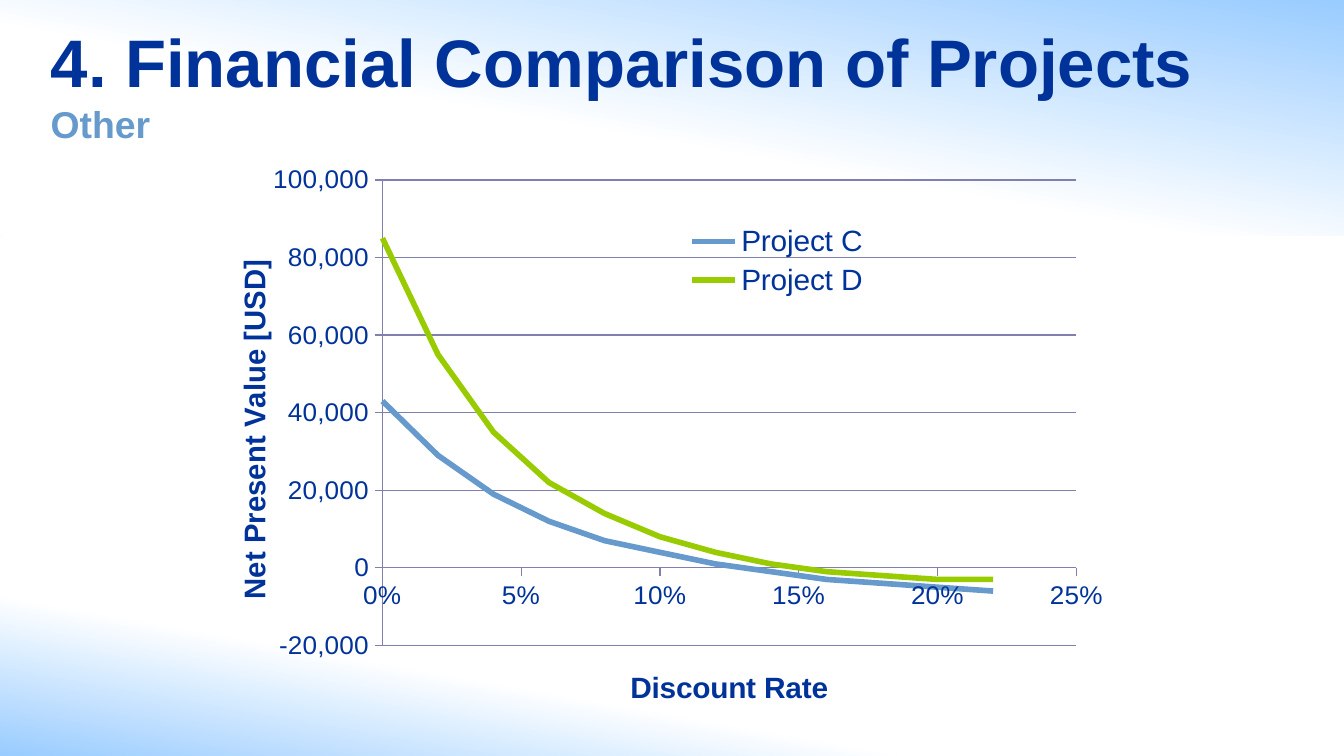
from dataclasses import dataclass

from lxml.etree import SubElement
from pptx import Presentation
from pptx.chart.data import XyChartData
from pptx.dml.color import RGBColor
from pptx.enum.chart import XL_CHART_TYPE, XL_LEGEND_POSITION, XL_TICK_MARK
from pptx.enum.shapes import MSO_SHAPE
from pptx.enum.text import MSO_ANCHOR, MSO_AUTO_SIZE, PP_ALIGN
from pptx.oxml.ns import qn
from pptx.util import Pt


@dataclass(frozen=True)
class Theme:
    font: str = "Arial"
    navy: RGBColor = RGBColor(0x00, 0x33, 0x99)
    steel: RGBColor = RGBColor(0x66, 0x99, 0xCC)
    green: RGBColor = RGBColor(0x99, 0xCC, 0x00)
    sky: RGBColor = RGBColor(0x99, 0xCC, 0xFF)
    white: RGBColor = RGBColor(0xFF, 0xFF, 0xFF)
    grid: RGBColor = RGBColor(0x80, 0x80, 0xB0)
    title: float = 36
    subtitle: float = 20
    label: float = 16
    tick: float = 14


THEME = Theme()
RATES = [step / 100 for step in range(0, 23, 2)]
PROJECTS = [
    ("Project C", THEME.steel, [43000, 29000, 19000, 12000, 7000, 4000,
                                1000, -1000, -3000, -4000, -5000, -6000]),
    ("Project D", THEME.green, [85000, 55000, 35000, 22000, 14000, 8000,
                                4000, 1000, -1000, -2000, -3000, -3000]),
]


def style_font(font, size, color=THEME.navy, bold=False):
    font.name = THEME.font
    font.size = Pt(size)
    font.bold = bold
    font.color.rgb = color


def place(shape, box):
    shape.left, shape.top, shape.width, shape.height = (Pt(value) for value in box)


def add_glow(page, box, angle, fade_end):
    """Sky-blue band that fades to white."""
    glow = page.shapes.add_shape(MSO_SHAPE.RECTANGLE, *(Pt(value) for value in box))
    glow.shadow.inherit = False
    glow.line.fill.background()
    glow.fill.gradient()
    glow.fill.gradient_angle = angle
    stops = glow.fill.gradient_stops
    for stop, color, position in zip(stops, (THEME.sky, THEME.white), (0, fade_end)):
        stop.color.rgb = color
        stop.position = position


def add_heading(page, title_box, subtitle_box):
    title = page.shapes.title
    place(title, title_box)
    page.shapes._spTree.append(title._element)  # bring in front of the bands
    subtitle = page.shapes.add_textbox(*(Pt(value) for value in subtitle_box))
    for shape, text, size, color in (
        (title, "4. Financial Comparison of Projects", THEME.title, THEME.navy),
        (subtitle, "Other", THEME.subtitle, THEME.steel),
    ):
        frame = shape.text_frame
        frame.word_wrap = True
        frame.text = text
        para = frame.paragraphs[0]
        para.alignment = PP_ALIGN.LEFT
        style_font(para.font, size, color, bold=True)
    title.text_frame.auto_size = MSO_AUTO_SIZE.NONE
    title.text_frame.vertical_anchor = MSO_ANCHOR.MIDDLE
    subtitle.text_frame.auto_size = MSO_AUTO_SIZE.SHAPE_TO_FIT_TEXT


def set_layout(element, index, inner=False, **fractions):
    """Fix a chart part at fractions of the chart area."""
    for old in element.findall(qn("c:layout")):
        element.remove(old)
    layout = SubElement(element, qn("c:layout"))
    element.insert(index, layout)
    manual = SubElement(layout, qn("c:manualLayout"))
    if inner:
        SubElement(manual, qn("c:layoutTarget")).set("val", "inner")
    for side in ("x", "y"):
        SubElement(manual, qn(f"c:{side}Mode")).set("val", "edge")
    for side, value in fractions.items():
        SubElement(manual, qn(f"c:{side}")).set("val", str(value))


def format_axis(axis, title, limits, number_format, title_spot):
    axis.minimum_scale, axis.maximum_scale, axis.major_unit = limits
    axis.major_tick_mark = XL_TICK_MARK.OUTSIDE
    axis.minor_tick_mark = XL_TICK_MARK.NONE
    axis.has_major_gridlines = False
    axis.format.line.color.rgb = THEME.grid
    axis.format.line.width = Pt(0.75)
    axis.tick_labels.number_format = number_format
    axis.tick_labels.number_format_is_linked = False
    style_font(axis.tick_labels.font, THEME.tick)
    frame = axis.axis_title.text_frame
    frame.text = title
    style_font(frame.paragraphs[0].font, THEME.label, bold=True)
    set_layout(axis.axis_title._element, 1, **title_spot)


def add_value_chart(page, box):
    data = XyChartData()
    for name, _, values in PROJECTS:
        series = data.add_series(name)
        for rate, value in zip(RATES, values):
            series.add_data_point(rate, value)
    chart = page.shapes.add_chart(
        XL_CHART_TYPE.XY_SCATTER_SMOOTH_NO_MARKERS,
        *(Pt(value) for value in box), data).chart
    chart.has_title = False
    style_font(chart.font, THEME.tick)
    chart.plots[0].vary_by_categories = False

    # Curves
    for series, (_, color, _) in zip(chart.plots[0].series, PROJECTS):
        series.smooth = True
        series.format.line.color.rgb = color
        series.format.line.width = Pt(3)

    # Axes
    format_axis(chart.category_axis, "Discount Rate", (0, 0.25, 0.05), "0%",
                {"x": 0.46, "y": 0.93})
    format_axis(chart.value_axis, "Net Present Value [USD]",
                (-20000, 100000, 20000), "#,##0", {"x": 0.02, "y": 0.2})
    chart.value_axis.has_major_gridlines = True
    grid = chart.value_axis.major_gridlines.format.line
    grid.color.rgb = THEME.grid
    grid.width = Pt(0.75)

    # Legend inside the plot
    chart.has_legend = True
    chart.legend.position = XL_LEGEND_POSITION.RIGHT
    chart.legend.include_in_layout = False
    style_font(chart.legend.font, THEME.label)
    set_layout(chart.legend._element, 1, x=0.53, y=0.125, w=0.2, h=0.15)
    plot_area = chart._chartSpace.chart.plotArea
    set_layout(plot_area, 0, inner=True, x=0.19, y=0.054, w=0.773, h=0.843)


def main():
    deck = Presentation()
    deck.slide_width, deck.slide_height = Pt(720), Pt(405)
    page = deck.slides.add_slide(deck.slide_layouts[5])
    add_glow(page, (0, 313, 502, 92), angle=80, fade_end=0.48)
    add_glow(page, (0, 0, 720, 126), angle=260, fade_end=0.56)
    add_heading(page, (20, 7, 669, 51), (20, 50.5, 481, 31.5))
    add_value_chart(page, (113.5, 80.5, 481, 301.5))
    deck.save("out.pptx")


if __name__ == "__main__":
    main()
